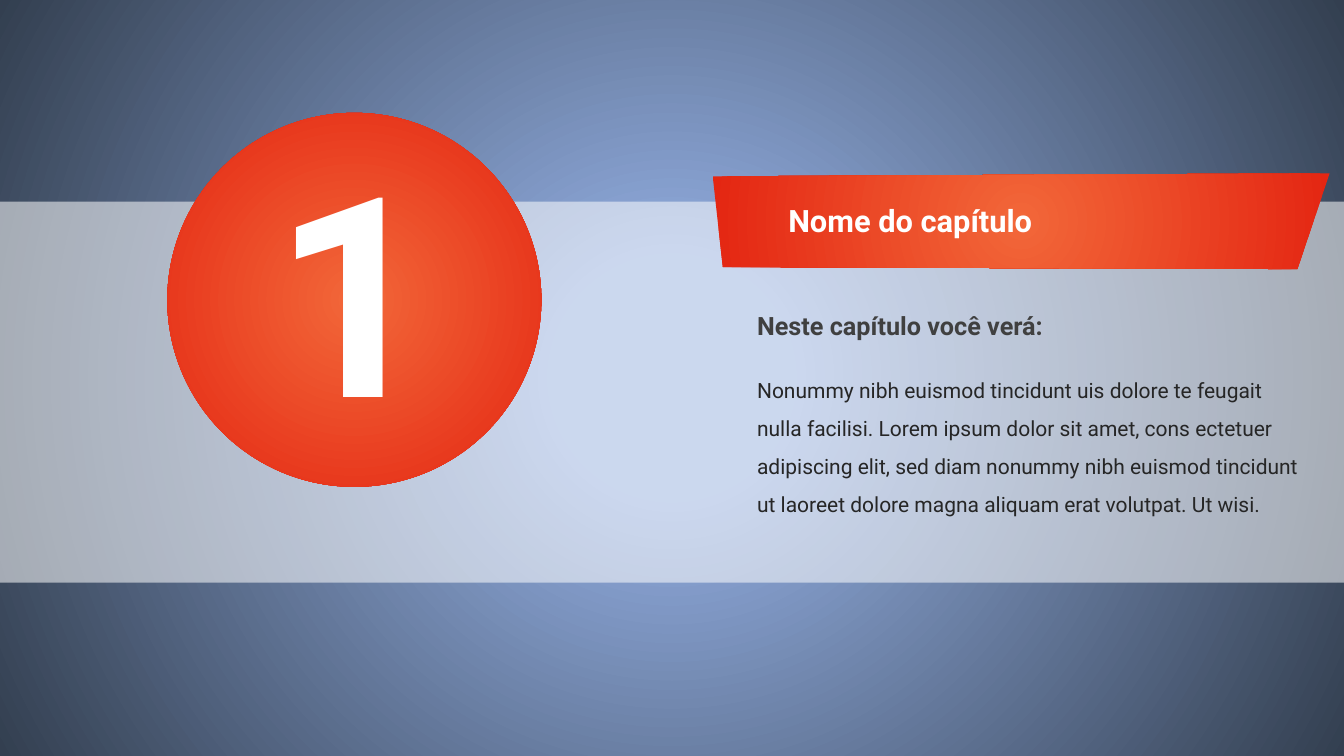
from lxml.etree import SubElement
from pptx import Presentation
from pptx.dml.color import RGBColor
from pptx.enum.shapes import MSO_SHAPE as Preset
from pptx.enum.text import MSO_ANCHOR as Anchor, MSO_AUTO_SIZE as AutoSize, PP_ALIGN as Align
from pptx.oxml import parse_xml
from pptx.oxml.ns import nsdecls, qn
from pptx.util import Inches, Pt

WIDTH, HEIGHT = Inches(13.33), Inches(7.5)
FONT = "Roboto"
COLORS = {
    "sky": "8FAADC", "night": "333F50", "white": "FFFFFF",
    "orange": "F26739", "red": "E42612",
    "heading": "404040", "summary": "262626",
}
BACKDROP = [(15, "sky"), (100, "night")]
ACCENT = [(0, "orange"), (100, "red")]


def col(share):
    """Length of a percentage of the slide's width."""
    return round(WIDTH * share / 100)


def row(share):
    """Length of a percentage of the slide's height."""
    return round(HEIGHT * share / 100)


def area(left, top, width, height):
    return col(left), row(top), col(width), row(height)


def make_plain(shape):
    shape.shadow.inherit = False
    shape.line.fill.background()


def fill_radial(shape, stops):
    """Fill with a circular gradient running outward from the centre."""
    stop_xml = "".join(
        f'<a:gs pos="{position * 1000}"><a:srgbClr val="{COLORS[color]}"/></a:gs>'
        for position, color in stops)
    gradient = parse_xml(
        f'<a:gradFill {nsdecls("a")} rotWithShape="1"><a:gsLst>{stop_xml}</a:gsLst>'
        '<a:path path="circle"><a:fillToRect l="50000" t="50000" r="50000" b="50000"/>'
        '</a:path></a:gradFill>')
    shape.fill.background()
    properties = shape.fill._xPr
    properties.replace(properties.find(qn("a:noFill")), gradient)


def add_radial(slide, preset, box, stops):
    shape = slide.shapes.add_shape(preset, *box)
    make_plain(shape)
    fill_radial(shape, stops)


def add_band(slide, box, opacity):
    band = slide.shapes.add_shape(Preset.RECTANGLE, *box)
    make_plain(band)
    band.fill.solid()
    band.fill.fore_color.rgb = RGBColor.from_string(COLORS["white"])
    color = band.fill._xPr.find(qn("a:solidFill"))[0]
    SubElement(color, qn("a:alpha")).set("val", str(opacity * 1000))


def add_ribbon(slide, corners):
    start, *others = [(col(x), row(y)) for x, y in corners]
    builder = slide.shapes.build_freeform(*start)
    builder.add_line_segments(others, close=True)
    ribbon = builder.convert_to_shape()
    make_plain(ribbon)
    fill_radial(ribbon, ACCENT)


def style(paragraph, size, color, bold=True, spacing=1.0, before=0):
    paragraph.alignment = Align.LEFT
    paragraph.line_spacing = spacing
    paragraph.space_before = Pt(before)
    paragraph.space_after = Pt(0)
    for run in paragraph.runs:
        run.font.name = FONT
        run.font.size = Pt(size)
        run.font.bold = bold
        run.font.color.rgb = RGBColor.from_string(COLORS[color])


def set_text(holder, box, text):
    """Place a text holder in front of all others and return its paragraphs."""
    holder.left, holder.top, holder.width, holder.height = box
    frame = holder.text_frame
    frame.text = text
    frame.word_wrap = True
    frame.auto_size = AutoSize.NONE
    frame.vertical_anchor = Anchor.TOP
    tree = holder.element.getparent()
    tree.append(holder.element)
    return frame.paragraphs


def remove_bullet(paragraph):
    properties = paragraph._p.get_or_add_pPr()
    properties.set("marL", "0")
    properties.set("indent", "0")
    SubElement(properties, qn("a:buNone"))


def main():
    deck = Presentation()
    deck.slide_width, deck.slide_height = WIDTH, HEIGHT
    slide = deck.slides.add_slide(deck.slide_layouts[1])
    chapter_name, chapter_summary = slide.placeholders

    add_radial(slide, Preset.RECTANGLE, area(0, 0, 100, 100), BACKDROP)
    add_band(slide, area(0, 26.67, 100, 50.4), opacity=54)
    add_ribbon(slide, [(53.03, 23.33), (98.93, 22.93), (96.53, 35.6), (53.78, 35.33)])

    heading, summary = set_text(
        chapter_summary, area(55.58, 40.4, 42.08, 28.53),
        "Neste capítulo você verá:\n"
        "Nonummy nibh euismod tincidunt uis dolore te feugait nulla facilisi. "
        "Lorem ipsum dolor sit amet, cons ectetuer adipiscing elit, sed diam nonummy "
        "nibh euismod tincidunt ut laoreet dolore magna aliquam erat volutpat. Ut wisi.")
    style(heading, 18, "heading")
    style(summary, 15, "summary", bold=False, spacing=1.5, before=17.6)
    for paragraph in (heading, summary):
        remove_bullet(paragraph)

    name, = set_text(chapter_name, area(57.9, 26, 36, 10.27), "Nome do capítulo")
    style(name, 22, "white")

    add_radial(slide, Preset.OVAL, area(12.45, 14.93, 27.83, 49.47), ACCENT)
    number_box = area(19.58, 14.93, 15, 50.27)
    number, = set_text(slide.shapes.add_textbox(*number_box), number_box, "1")
    style(number, 200, "white")

    deck.save("out.pptx")


if __name__ == "__main__":
    main()
